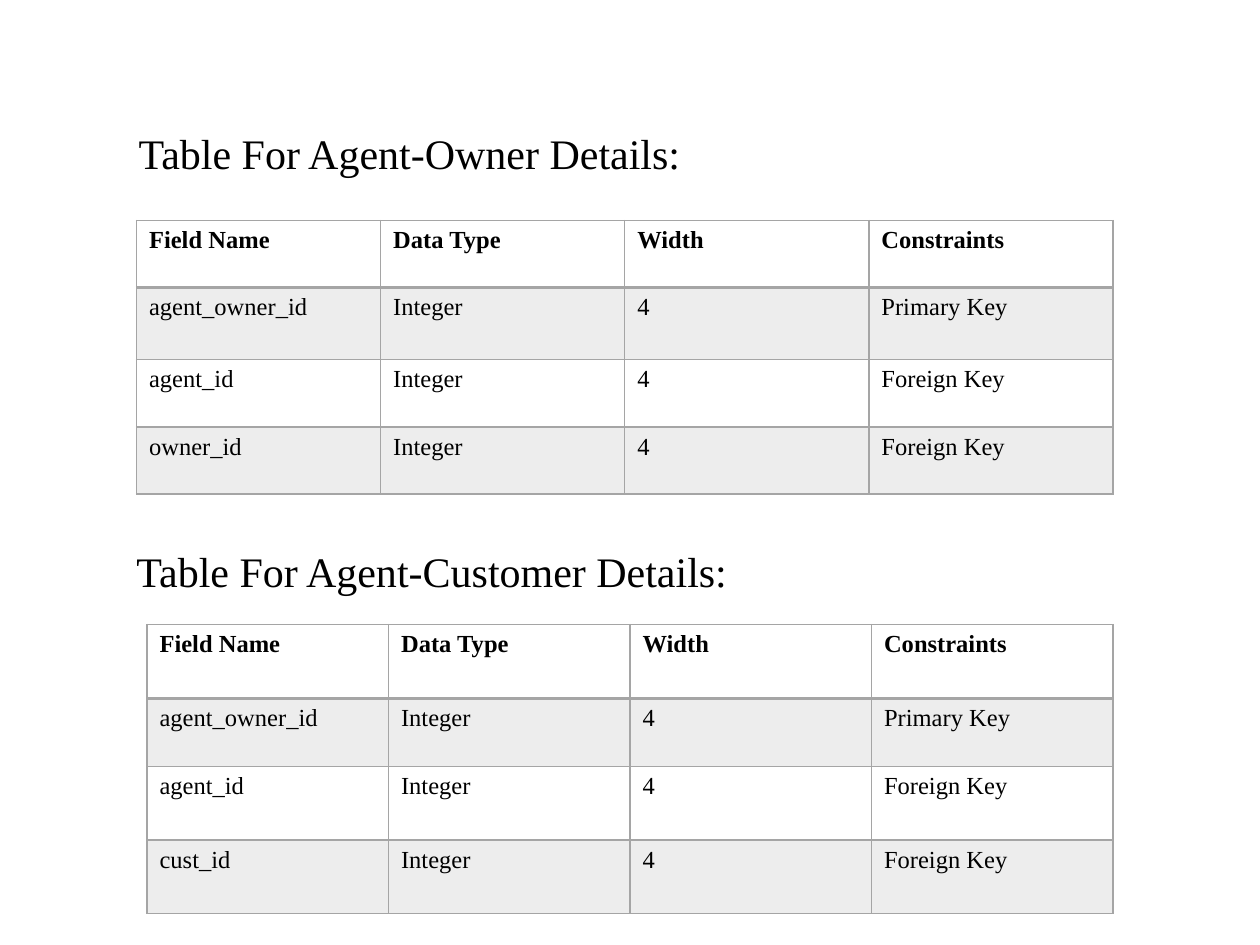
from lxml import etree
from pptx import Presentation
from pptx.dml.color import RGBColor
from pptx.enum import text
from pptx.oxml import ns
from pptx.util import Pt

BLACK = RGBColor(0x00, 0x00, 0x00)
GRAY = RGBColor(0xA5, 0xA5, 0xA5)
FONT = "Times New Roman"
HEADER = ["Field Name", "Data Type", "Width", "Constraints"]


def add_text(paragraph, words, size, bold=False):
    run = paragraph.add_run()
    run.text = words
    run.font.name = FONT
    run.font.size = Pt(size)
    run.font.bold = bold
    run.font.color.rgb = BLACK


def add_border(cell, side, width):
    properties = cell._tc.get_or_add_tcPr()
    line = etree.SubElement(properties, ns.qn(f"a:ln{side}"), w=str(Pt(width)))
    fill = etree.SubElement(line, ns.qn("a:solidFill"))
    etree.SubElement(fill, ns.qn("a:srgbClr"), val=str(GRAY))


presentation = Presentation()
presentation.slide_width = Pt(720)
presentation.slide_height = Pt(540)
slide = presentation.slides.add_slide(presentation.slide_layouts[5])

# Title above the first table
title = slide.shapes.title
title.left, title.top, title.width, title.height = Pt(72), Pt(72), Pt(330), Pt(34.5)
title.text_frame.word_wrap = True
title.text_frame.auto_size = text.MSO_AUTO_SIZE.NONE
title.text_frame.vertical_anchor = text.MSO_ANCHOR.MIDDLE
paragraph = title.text_frame.paragraphs[0]
paragraph.alignment = text.PP_ALIGN.LEFT
paragraph.line_spacing = 0.9
add_text(paragraph, "Table For Agent-Owner Details:", 24)

# Heading above the second table
heading = slide.shapes.add_textbox(Pt(78), Pt(306), Pt(360), Pt(34.5))
frame = heading.text_frame
frame.word_wrap = True
frame.vertical_anchor = text.MSO_ANCHOR.BOTTOM
frame.margin_left = frame.margin_right = frame.margin_bottom = 0
frame.margin_top = Pt(3.6)
add_text(frame.paragraphs[0], "Table For Agent-Customer Details:", 24)

# Both tables: left, top, width, row heights, name of the last field
tables = [
    (78, 126, 558, [38.4, 41.2, 38.4, 38.4], "owner_id"),
    (84, 357, 552, [42, 39, 42, 42], "cust_id"),
]
for left, top, width, heights, last_field in tables:
    rows = [
        HEADER,
        ["agent_owner_id", "Integer", "4", "Primary Key"],
        ["agent_id", "Integer", "4", "Foreign Key"],
        [last_field, "Integer", "4", "Foreign Key"],
    ]
    table = slide.shapes.add_table(
        len(rows), len(HEADER), Pt(left), Pt(top), Pt(width), Pt(sum(heights))
    ).table
    for column in table.columns:
        column.width = Pt(width / len(HEADER))
    for r, values in enumerate(rows):
        table.rows[r].height = Pt(heights[r])
        for c, value in enumerate(values):
            cell = table.cell(r, c)
            add_text(cell.text_frame.paragraphs[0], value, 14, bold=r == 0)
            # The rule under the header is twice as thick
            add_border(cell, "L", 1)
            add_border(cell, "R", 1)
            add_border(cell, "T", 2 if r == 1 else 1)
            add_border(cell, "B", 2 if r == 0 else 1)
            # Every second row is shaded with a light tint
            if r % 2:
                cell.fill.solid()
                cell.fill.fore_color.rgb = GRAY
                color = cell._tc.tcPr.find(ns.qn("a:solidFill"))[0]
                etree.SubElement(color, ns.qn("a:alpha"), val="20000")
            else:
                cell.fill.background()

presentation.save("out.pptx")
